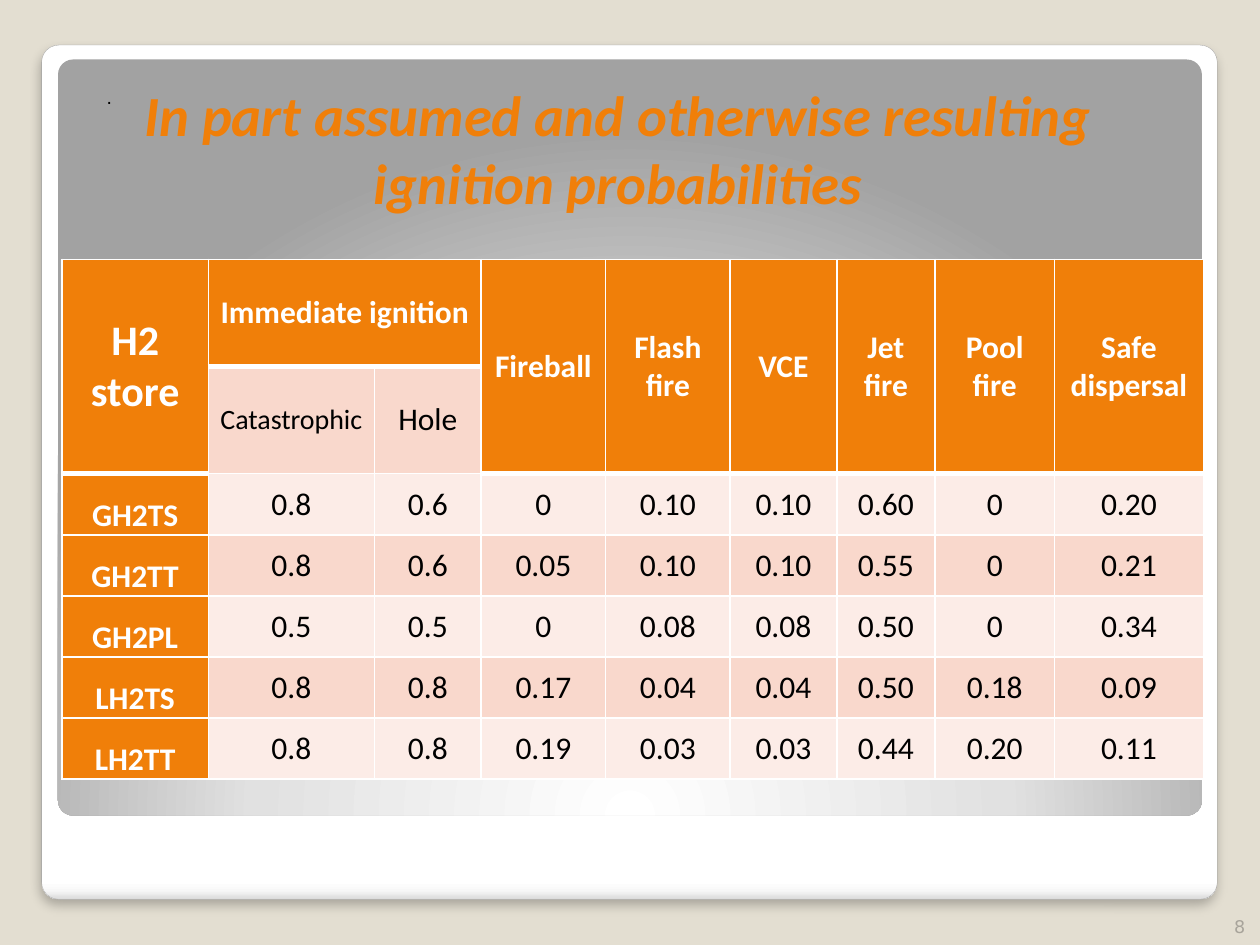
from pptx import Presentation
from pptx.dml.color import RGBColor
from pptx.enum.shapes import MSO_SHAPE
from pptx.enum.text import MSO_ANCHOR, PP_ALIGN
from pptx.oxml import parse_xml
from pptx.oxml.ns import nsdecls
from pptx.util import Cm, Pt

HUES = {
    "page": "E3DED1", "edge": "A4A4A4", "white": "FFFFFF", "black": "000000",
    "main": "F07F09", "dark": "F9D8CC", "pale": "FCECE7", "num": "A8A49B",
}
LOOKS = {
    "title": {"name": "Calibri", "size": Pt(32.4), "bold": True, "italic": True},
    "num": {"name": "DejaVu Sans", "size": Pt(10)},
    "dot": {"name": "Arial", "size": Pt(11)},
    "store": {"name": "Calibri", "size": Pt(24), "bold": True},
    "head": {"name": "Calibri", "size": Pt(18), "bold": True},
    "small": {"name": "Calibri", "size": Pt(16), "bold": False},
    "body": {"name": "Calibri", "size": Pt(18), "bold": False},
}
CARD = [(0, "FFFFFF"), (98, "FFFFFF"), (99, "F7F7F7"), (100, "DADADA")]
GLOW = [(0, "FFFFFF"), (55, "E1E1E1"), (100, "A2A2A2")]
DOWN = '<a:lin ang="5400000" scaled="0"/>'
ROUND = ('<a:path path="circle"><a:fillToRect l="50000" t="175000" '
         'r="50000" b="-75000"/></a:path>')
SHADE = ('<a:outerShdw {} blurRad="76200" dist="50800" dir="5400000" algn="t" '
         'rotWithShape="0"><a:srgbClr val="{}"><a:alpha val="25000"/>'
         '</a:srgbClr></a:outerShdw>')
COLS = [2.95, 3.35, 2.15, 2.51, 2.51, 2.15, 1.98, 2.41, 3]
ROWS = [2.16] * 2 + [1.23] * 5
SPLIT = (1, 2)
DATA = [
    ["H2\nstore", "Immediate ignition", "", "Fireball", "Flash fire", "VCE",
     "Jet fire", "Pool fire", "Safe dispersal"],
    ["", "Catastrophic", "Hole", "", "", "", "", "", ""],
    ["GH2TS", "0.8", "0.6", "0", "0.10", "0.10", "0.60", "0", "0.20"],
    ["GH2TT", "0.8", "0.6", "0.05", "0.10", "0.10", "0.55", "0", "0.21"],
    ["GH2PL", "0.5", "0.5", "0", "0.08", "0.08", "0.50", "0", "0.34"],
    ["LH2TS", "0.8", "0.8", "0.17", "0.04", "0.04", "0.50", "0.18", "0.09"],
    ["LH2TT", "0.8", "0.8", "0.19", "0.03", "0.03", "0.44", "0.20", "0.11"],
]


def rgb(hue):
    return RGBColor.from_string(HUES[hue])


def apply(item, vals):
    for key, val in vals.items():
        setattr(item, key, val)


def write(frame, words, look, hue, align):
    frame.text = words
    for para in frame.paragraphs:
        para.alignment = align
        for run in para.runs:
            apply(run.font, LOOKS[look])
            run.font.color.rgb = rgb(hue)


def add_text(slide, box, words, look, hue, align, anchor, wrap=True):
    frame = slide.shapes.add_textbox(*map(Cm, box)).text_frame
    apply(frame, {"word_wrap": wrap, "vertical_anchor": anchor})
    write(frame, words, look, hue, align)


def add_panel(slide, box, stops, course):
    panel = slide.shapes.add_shape(MSO_SHAPE.ROUNDED_RECTANGLE, *map(Cm, box))
    panel.adjustments[0] = 0.02
    panel.shadow.inherit = False
    panel.line.fill.background()
    marks = "".join(f'<a:gs pos="{pos * 1000}"><a:srgbClr val="{hue}"/></a:gs>'
                    for pos, hue in stops)
    panel.fill.background()
    old = panel.fill._xPr.find("{*}noFill")
    grad = parse_xml(f'<a:gradFill {nsdecls("a")} rotWithShape="1">'
                     f'<a:gsLst>{marks}</a:gsLst>{course}</a:gradFill>')
    old.getparent().replace(old, grad)
    return panel


def add_card(slide):
    card = add_panel(slide, (0.84, 0.91, 23.7, 17.22), CARD, DOWN)
    card.line.color.rgb = rgb("edge")
    card.line.width = Pt(0.16)
    glow = card._element.spPr.find("{*}effectLst")
    glow.append(parse_xml(SHADE.format(nsdecls("a"), HUES["black"])))


def is_thick(row, col):
    return row == 0 or (row == 1 and col not in SPLIT)


def set_lines(cell, row, col):
    wide = {"L": 1, "R": 1, "T": 3 if is_thick(row - 1, col) and row else 1,
            "B": 3 if is_thick(row, col) else 1}
    props = cell._tc.get_or_add_tcPr()
    for spot, (side, size) in enumerate(wide.items()):
        props.insert(spot, parse_xml(
            f'<a:ln{side} {nsdecls("a")} w="{Pt(size)}"><a:solidFill>'
            f'<a:srgbClr val="{HUES["white"]}"/></a:solidFill></a:ln{side}>'))


def pick_style(row, col):
    if row < 2 and col == 0:
        return "store", "white", "main"
    if col == 0 or row == 0 or (row == 1 and col not in SPLIT):
        return "head", "white", "main"
    look = "small" if (row, col) == (1, 1) else "body"
    return look, "black", "dark" if row % 2 else "pale"


def fill_cell(cell, row, col):
    look, hue, back = pick_style(row, col)
    low = col == 0 and row > 1
    apply(cell, {
        "margin_left": Cm(0.18), "margin_right": Cm(0.18),
        "margin_top": 0, "margin_bottom": 0,
        "vertical_anchor": MSO_ANCHOR.BOTTOM if low else MSO_ANCHOR.MIDDLE,
    })
    cell.fill.solid()
    cell.fill.fore_color.rgb = rgb(back)
    set_lines(cell, row, col)
    if DATA[row][col]:
        write(cell.text_frame, DATA[row][col], look, hue, PP_ALIGN.CENTER)


def add_grid(slide):
    grid = slide.shapes.add_table(
        len(ROWS), len(COLS), Cm(1.25), Cm(5.23),
        Cm(sum(COLS)), Cm(sum(ROWS))).table
    apply(grid, {"first_row": False, "horz_banding": False})
    for col, width in zip(grid.columns, COLS):
        col.width = Cm(width)
    for row, height in zip(grid.rows, ROWS):
        row.height = Cm(height)
    for row in range(len(ROWS)):
        for col in range(len(COLS)):
            fill_cell(grid.cell(row, col), row, col)
    grid.cell(0, 1).merge(grid.cell(0, 2))
    for col in range(len(COLS)):
        if col not in SPLIT:
            grid.cell(0, col).merge(grid.cell(1, col))


def main():
    deck = Presentation()
    apply(deck, {"slide_width": Cm(25.4), "slide_height": Cm(19.05)})
    slide = deck.slides.add_slide(deck.slide_layouts[6])
    slide.background.fill.solid()
    slide.background.fill.fore_color.rgb = rgb("page")
    add_card(slide)
    add_panel(slide, (1.17, 1.2, 23.06, 15.24), GLOW, ROUND)
    add_text(slide, (20.27, 18, 5.08, 1.02), "8", "num", "num",
             PP_ALIGN.RIGHT, MSO_ANCHOR.BOTTOM)
    add_text(slide, (1.09, 1.52, 22.73, 2.92),
             "In part assumed and otherwise resulting ignition probabilities",
             "title", "main", PP_ALIGN.CENTER, MSO_ANCHOR.MIDDLE)
    add_grid(slide)
    add_text(slide, (1.9, 1.6, 0.61, 1.5), ".", "dot", "black",
             PP_ALIGN.LEFT, MSO_ANCHOR.TOP, False)
    deck.save("out.pptx")


if __name__ == "__main__":
    main()
